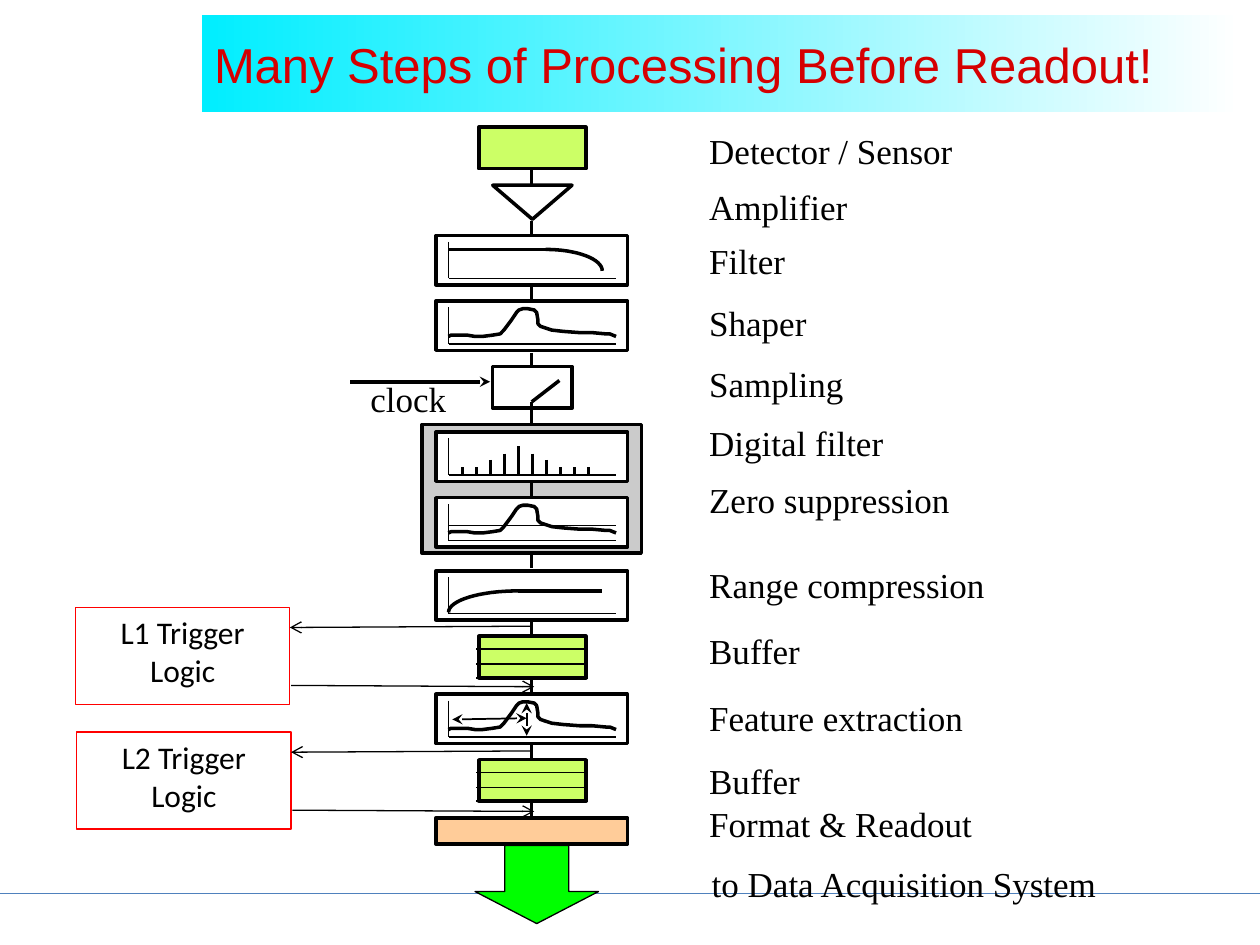
"""Build a slide showing the signal processing chain from detector to data acquisition."""
from dataclasses import dataclass
from math import cos, pi, sin

from lxml.etree import SubElement
from pptx import Presentation
from pptx.dml.color import RGBColor
from pptx.enum.shapes import MSO_CONNECTOR, MSO_SHAPE
from pptx.enum.text import MSO_ANCHOR, PP_ALIGN
from pptx.oxml.ns import qn
from pptx.util import Inches, Pt


@dataclass(frozen=True)
class Theme:
    ink: RGBColor = RGBColor.from_string("000000")
    paper: RGBColor = RGBColor.from_string("FFFFFF")
    title: RGBColor = RGBColor.from_string("D50001")
    banner: RGBColor = RGBColor.from_string("00EEFF")
    rule: RGBColor = RGBColor.from_string("4F81BD")
    memory: RGBColor = RGBColor.from_string("CCFF66")
    digital: RGBColor = RGBColor.from_string("CBCBCB")
    readout: RGBColor = RGBColor.from_string("FFCC99")
    output: RGBColor = RGBColor.from_string("00FF00")
    trigger: RGBColor = RGBColor.from_string("FF0000")
    title_size: Pt = Pt(28)
    label_size: Pt = Pt(20)
    trigger_size: Pt = Pt(18)
    heavy: Pt = Pt(2)
    light: Pt = Pt(1)
    thin: Pt = Pt(0.75)
    hairline: Pt = Pt(0.25)


theme = Theme()
deck = Presentation()
deck.slide_width, deck.slide_height = Inches(10), Inches(7.5)
slide = deck.slides.add_slide(deck.slide_layouts[6])
shapes = slide.shapes


def write(text, left, top, width, height=0.44, size=theme.label_size, font="Times New Roman",
          color=theme.ink, align=PP_ALIGN.LEFT, anchor=MSO_ANCHOR.TOP, wrap=False):
    box = shapes.add_textbox(Inches(left), Inches(top), Inches(width), Inches(height))
    frame = box.text_frame
    frame.word_wrap = wrap
    frame.vertical_anchor = anchor
    paragraph = frame.paragraphs[0]
    paragraph.text = text
    paragraph.alignment = align
    paragraph.font.size, paragraph.font.name = size, font
    paragraph.font.color.rgb = color
    return box


def stroke(x1, y1, x2, y2, width=theme.heavy, color=theme.ink, head=None, tail=None):
    line = shapes.add_connector(MSO_CONNECTOR.STRAIGHT, Inches(x1), Inches(y1), Inches(x2), Inches(y2))
    line.line.width = width
    line.line.color.rgb = color
    properties = line.element.spPr
    for tag, arrow in (("a:headEnd", head), ("a:tailEnd", tail)):
        if arrow:
            SubElement(properties.find(qn("a:ln")), qn(tag), type=arrow)
    SubElement(properties, qn("a:effectLst"))


stroke(0, 7.09, 10, 7.09, theme.hairline, theme.rule)

title = write("Many Steps of Processing Before Readout!", 1.6, 0.12, 8.25, 0.77, size=theme.title_size,
              font="Arial", color=theme.title, anchor=MSO_ANCHOR.MIDDLE, wrap=True)
title.fill.gradient()
title.fill.gradient_angle = 0
for stop, color, position in zip(title.fill.gradient_stops, (theme.banner, theme.paper), (0, 1)):
    stop.color.rgb, stop.position = color, position

plot_tops = filter_top, shaper_top, digital_top, zero_top, range_top, feature_top = (
    1.87, 2.39, 3.43, 3.95, 4.53, 5.51)
buffer_tops = 5.05, 6.03
stages = [
    (MSO_SHAPE.RECTANGLE, 3.8, 1.01, 0.85, 0.33, theme.memory),
    (MSO_SHAPE.ISOSCELES_TRIANGLE, 3.91, 1.47, 0.63, 0.27, theme.paper),
    (MSO_SHAPE.RECTANGLE, 3.91, 2.91, 0.63, 0.33, theme.paper),
    (MSO_SHAPE.RECTANGLE, 3.35, 3.37, 1.74, 1.02, theme.digital),
    *((MSO_SHAPE.RECTANGLE, 3.46, top, 1.52, 0.39, theme.paper) for top in plot_tops),
    *((MSO_SHAPE.RECTANGLE, 3.8, top, 0.85, 0.33, theme.memory) for top in buffer_tops),
    (MSO_SHAPE.RECTANGLE, 3.46, 6.49, 1.52, 0.21, theme.readout),
    (MSO_SHAPE.DOWN_ARROW, 3.77, 6.71, 0.98, 0.62, theme.output),
]
for kind, left, top, width, height, color in stages:
    stage = shapes.add_shape(kind, Inches(left), Inches(top), Inches(width), Inches(height))
    stage.shadow.inherit = False
    stage.fill.solid()
    stage.fill.fore_color.rgb = color
    stage.line.color.rgb = theme.ink
    stage.line.width = theme.heavy
    if kind == MSO_SHAPE.ISOSCELES_TRIANGLE:
        stage.rotation = 180
    if kind == MSO_SHAPE.DOWN_ARROW:
        stage.line.width = theme.thin
        stage.adjustments[0], stage.adjustments[1] = 0.52, 0.41

for top in plot_tops:
    stroke(3.56, top + 0.05, 3.56, top + 0.34, theme.light)
    stroke(3.56, top + 0.34, 4.89, top + 0.34, theme.light)
for top in buffer_tops:
    for offset in (0.1, 0.22, 0.33):
        stroke(3.78, top + offset, 4.67, top + offset, theme.light)

links = [(1.34, 1.46), (1.75, 1.86), (2.27, 2.38), (2.8, 2.92), (3.19, 3.37), (3.83, 3.94),
         (4.4, 4.51), (4.92, 5.04), (5.38, 5.5), (5.9, 6.02), (6.36, 6.48)]
for start, end in links:
    stroke(4.22, start, 4.22, end)

samples = [0.06, 0.06, 0.12, 0.17, 0.23, 0.17, 0.12, 0.06, 0.06, 0.06]
for index, height in enumerate(samples):
    x = 3.67 + index / 9
    stroke(x, 3.77 - height, x, 3.77)

pulse = [
    (3.56, 0.28), (3.58, 0.27), (3.71, 0.27), (3.77, 0.28), (3.83, 0.28), (3.91, 0.27),
    (3.97, 0.26), (4, 0.23), (4.03, 0.19), (4.06, 0.15), (4.08, 0.12), (4.1, 0.09),
    (4.12, 0.07), (4.15, 0.06), (4.19, 0.06), (4.24, 0.07), (4.26, 0.09), (4.27, 0.15),
    (4.27, 0.18), (4.29, 0.2), (4.32, 0.21), (4.38, 0.23), (4.47, 0.24), (4.6, 0.25),
    (4.7, 0.25), (4.81, 0.26), (4.84, 0.26), (4.89, 0.28)]
angles = [step * pi / 32 for step in range(17)]
curves = [[(x, top + y) for x, y in pulse] for top in (shaper_top, zero_top, feature_top)]
curves.append([(4.33 + 0.45 * sin(a), 2.15 - 0.17 * cos(a)) for a in angles])
curves.append([(4.11 - 0.55 * cos(a), 4.86 - 0.17 * sin(a)) for a in angles])
for curve in curves:
    points = [(Inches(x), Inches(y)) for x, y in curve]
    builder = shapes.build_freeform(*points[0])
    builder.add_line_segments(points[1:], close=False)
    trace = builder.convert_to_shape()
    trace.shadow.inherit = False
    trace.fill.background()
    trace.line.color.rgb = theme.ink
    trace.line.width = theme.heavy

stroke(3.56, 1.98, 4.33, 1.98)
stroke(4.11, 4.69, 4.78, 4.69)
stroke(4.44, 3.02, 4.22, 3.19)
stroke(3.56, 4.17, 4.89, 4.17, theme.light)
stroke(2.78, 3.03, 3.89, 3.03, tail="stealth")
stroke(4.18, 5.58, 4.18, 5.84, theme.light, head="stealth", tail="stealth")
stroke(3.59, 5.71, 4.18, 5.7, theme.light, head="stealth", tail="stealth")

labels = [
    ("Detector / Sensor", 5.53, 0.98, 2.15), ("Amplifier", 5.53, 1.42, 1.31),
    ("Filter", 5.53, 1.85, 0.82), ("Shaper", 5.53, 2.34, 0.99),
    ("Sampling", 5.53, 2.83, 1.28), ("clock", 2.84, 2.95, 0.81),
    ("Digital filter", 5.53, 3.3, 1.59), ("Zero suppression", 5.53, 3.75, 2.13),
    ("Range compression", 5.53, 4.42, 2.41), ("Buffer", 5.53, 4.95, 0.93),
    ("Feature extraction", 5.53, 5.48, 2.24), ("Buffer", 5.53, 5.98, 0.93),
    ("Format & Readout", 5.53, 6.32, 2.31), ("to Data Acquisition System", 5.55, 6.8, 3.28)]
for text, left, top, width in labels:
    write(text, left, top, width)

for text, left, top in (("L1 Trigger Logic", 0.6, 4.82), ("L2 Trigger Logic", 0.61, 5.81)):
    trigger = write(text, left, top, 1.7, 0.77, size=theme.trigger_size, font="Calibri",
                    align=PP_ALIGN.CENTER, wrap=True)
    trigger.line.color.rgb = theme.trigger
    trigger.line.width = theme.thin
    stroke(4.22, top + 0.15, left + 1.7, top + 0.16, theme.thin, tail="arrow")
    stroke(left + 1.71, top + 0.62, 4.24, top + 0.63, theme.thin, tail="arrow")

deck.save("out.pptx")
